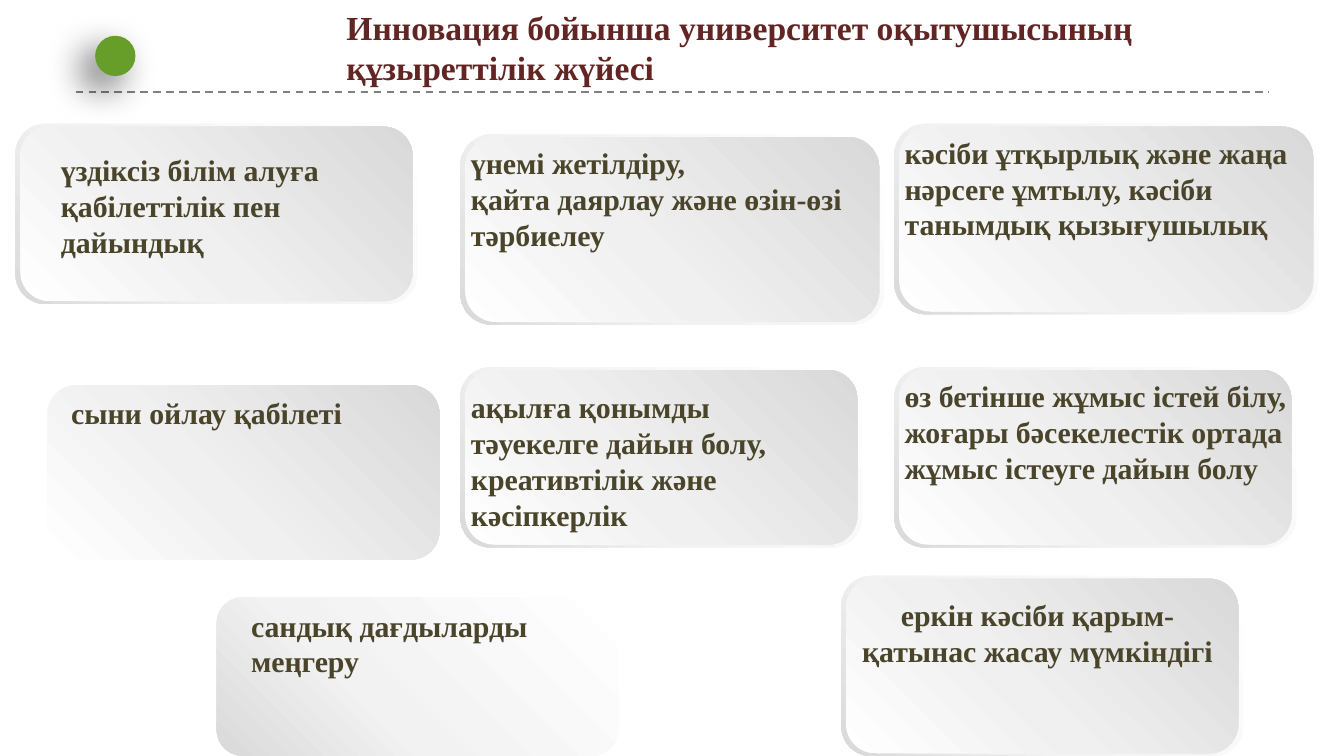
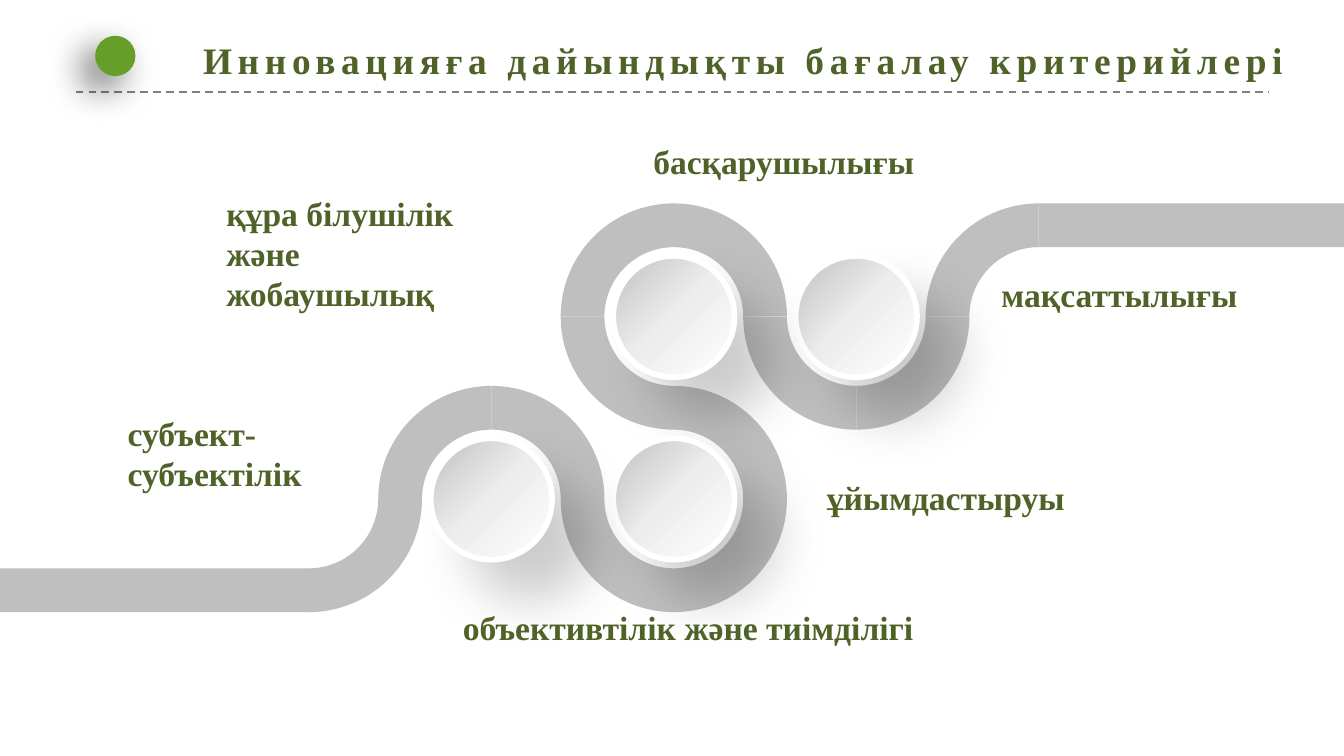
from dataclasses import dataclass
from math import cos, pi, sin, tan

from lxml.etree import SubElement
from pptx import Presentation
from pptx.dml.color import RGBColor
from pptx.enum.dml import MSO_LINE
from pptx.enum.shapes import MSO_CONNECTOR, MSO_SHAPE
from pptx.enum.text import MSO_ANCHOR, MSO_AUTO_SIZE, PP_ALIGN
from pptx.oxml.ns import qn
from pptx.util import Pt

FONT = "Times New Roman"
BLACK = RGBColor(0x00, 0x00, 0x00)
WHITE = RGBColor(0xFF, 0xFF, 0xFF)
GREY = RGBColor(0x80, 0x80, 0x80)
ROAD = RGBColor(0xBF, 0xBF, 0xBF)
DOT_GREEN = RGBColor(0x67, 0x9E, 0x2A)
TITLE_RED = RGBColor(0x63, 0x25, 0x23)
TEXT_GREEN = RGBColor(0x4F, 0x62, 0x28)
TEXT_OLIVE = RGBColor(0x4A, 0x45, 0x2A)

# Gradient stops: position in percent and colour
SHADE = RGBColor(0xD9, 0xD9, 0xD9)
EDGE_STOPS = [(0, WHITE), (62, RGBColor(0xF2, 0xF2, 0xF2)), (100, SHADE)]
FACE_STOPS = [(0, WHITE), (42, RGBColor(0xF0, 0xF0, 0xF0)), (100, SHADE)]
DISC_STOPS = [(0, RGBColor(0xC0, 0xC0, 0xC0)),
              (49, RGBColor(0xED, 0xED, 0xED)), (100, WHITE)]

# Text box insets: horizontal and vertical
NO_INSET = (0, 0)
SMALL_INSET = (5.4, 2.7)
INSET = (7.2, 3.6)

# Road geometry: ring centres lie on a square grid
OUTER, INNER = 60.6, 37.15
STEP = OUTER + INNER
GRID_X, GRID_Y = 165.5, 169.6
DISC = 65
SLIDE_W, SLIDE_H = 720, 405


@dataclass(frozen=True)
class Box:
    x: float
    y: float
    w: float
    h: float

    def lengths(self) -> tuple:
        return Pt(self.x), Pt(self.y), Pt(self.w), Pt(self.h)


@dataclass(frozen=True)
class Card:
    box: Box
    text: str
    text_box: Box
    inset: tuple = NO_INSET
    align: PP_ALIGN = PP_ALIGN.LEFT
    edge: bool = True
    face: bool = True


@dataclass(frozen=True)
class Label:
    text: str
    box: Box
    inset: tuple = SMALL_INSET
    spacing: float = 1.0
    wrap: bool = True


@dataclass(frozen=True)
class Ring:
    col: int
    row: int
    quarters: tuple  # 0 lower right, 1 lower left, 2 upper left, 3 upper right

    def center(self) -> tuple:
        return GRID_X + self.col * STEP, GRID_Y + self.row * STEP


CARDS = [
    Card(Box(246.6, 72, 227, 102),
         "үнемі жетілдіру,\nқайта даярлау және өзін-өзі тәрбиелеу",
         Box(252.3, 77.6, 215.3, 58.3)),
    Card(Box(8.3, 66.4, 215.3, 96.5),
         "үздіксіз білім алуға қабілеттілік пен дайындық",
         Box(25.5, 77.8, 198.7, 65.5), INSET),
    Card(Box(479.1, 66.4, 227, 102),
         "кәсіби ұтқырлық және жаңа нәрсеге ұмтылу, кәсіби танымдық қызығушылық",
         Box(484.6, 72, 215.3, 77.8)),
    Card(Box(246.6, 196.8, 215.3, 96.5),
         "ақылға қонымды тәуекелге дайын болу, креативтілік және кәсіпкерлік",
         Box(252.3, 208.3, 198.7, 77.8)),
    Card(Box(479.1, 196.8, 215.3, 96.5),
         "өз бетінше жұмыс істей білу, жоғары бәсекелестік ортада жұмыс істеуге дайын болу",
         Box(484.6, 202.3, 215.3, 58.3)),
    Card(Box(116.1, 319.9, 215.3, 85), "сандық дағдыларды меңгеру",
         Box(127.4, 321.8, 181.4, 46), INSET, face=False),
    Card(Box(22.8, 204.9, 215.3, 96.5), "сыни ойлау қабілеті",
         Box(31, 208, 193, 26.6), INSET, edge=False),
    Card(Box(450.7, 308.6, 215.3, 96.5), "еркін кәсіби қарым-қатынас жасау мүмкіндігі",
         Box(456.5, 319.7, 198.7, 38.9), align=PP_ALIGN.CENTER),
]

RINGS = [
    Ring(4, 0, (2,)), Ring(3, 0, (0, 1)), Ring(2, 0, (3, 2, 1)),
    Ring(2, 1, (3, 0, 1)), Ring(1, 1, (3, 2)), Ring(0, 1, (0,)),
]

LABELS = [
    Label("мақсаттылығы", Box(531.1, 144, 188.6, 26.6)),
    Label("құра білушілік және жобаушылық", Box(115.9, 100.4, 161.3, 70.6)),
    Label("ұйымдастыруы", Box(437.5, 241.9, 143.3, 37.4), spacing=1.5),
    Label("субъект-субъектілік", Box(63, 218.4, 125.3, 49)),
    Label("басқарушылығы", Box(342.9, 72, 155.5, 28.8), INSET, wrap=False),
    Label("объективтілік және тиімділігі", Box(240.9, 321.8, 360, 28.8), INSET),
]


def write(tf, text: str, *, size: float, color: RGBColor, inset=INSET,
          align=PP_ALIGN.LEFT, spacing=1.0, tracking=0, wrap=True) -> None:
    tf.word_wrap = wrap
    tf.auto_size = MSO_AUTO_SIZE.SHAPE_TO_FIT_TEXT
    tf.vertical_anchor = MSO_ANCHOR.TOP
    tf.margin_left = tf.margin_right = Pt(inset[0])
    tf.margin_top = tf.margin_bottom = Pt(inset[1])
    for i, line in enumerate(text.split("\n")):
        p = tf.add_paragraph() if i else tf.paragraphs[0]
        p.alignment = align
        p.line_spacing = spacing
        r = p.add_run()
        r.text = line
        r.font.name, r.font.size, r.font.bold = FONT, Pt(size), True
        r.font.color.rgb = color
        if tracking:
            r.font._element.set("spc", str(tracking * 100))


def add_text(s, box: Box, text: str, **fmt) -> None:
    write(s.shapes.add_textbox(*box.lengths()).text_frame, text, **fmt)


def add_color(parent, color: RGBColor):
    return SubElement(parent, qn("a:srgbClr"), val=str(color))


def set_gradient(sp, stops: list, angle: int) -> None:
    grad = sp._element.spPr.makeelement(qn("a:gradFill"), {"rotWithShape": "1"})
    sp._element.spPr.find(qn("a:prstGeom")).addnext(grad)
    gs_list = SubElement(grad, qn("a:gsLst"))
    for position, color in stops:
        add_color(SubElement(gs_list, qn("a:gs"), pos=str(position * 1000)), color)
    SubElement(grad, qn("a:lin"), ang=str(angle * 60000), scaled="0")


def set_shadow(sp, alpha: int, blur: float, dist: float, angle: int) -> None:
    effects = sp._element.spPr.find(qn("a:effectLst"))
    shadow = SubElement(effects, qn("a:outerShdw"), blurRad=str(Pt(blur)),
                        dist=str(Pt(dist)), dir=str(angle * 60000),
                        algn="ctr", rotWithShape="0")
    SubElement(add_color(shadow, BLACK), qn("a:alpha"), val=str(alpha * 1000))


def set_plain(sp, color: RGBColor | None = None) -> None:
    sp.shadow.inherit = False
    sp.line.fill.background()
    if color is not None:
        sp.fill.solid()
        sp.fill.fore_color.rgb = color


def add_shape(s, kind: MSO_SHAPE, box: Box, color: RGBColor | None = None):
    sp = s.shapes.add_shape(kind, *box.lengths())
    set_plain(sp, color)
    return sp


def add_slide(prs, title: str, box: Box, **fmt):
    s = prs.slides.add_slide(prs.slide_layouts[5])
    # Dashed rule and green dot
    rule = s.shapes.add_connector(MSO_CONNECTOR.STRAIGHT,
                                  Pt(40.5), Pt(49.2), Pt(679.5), Pt(49.2))
    rule.line.color.rgb, rule.line.width = GREY, Pt(1)
    rule.line.dash_style = MSO_LINE.DASH
    SubElement(rule._element.spPr, qn("a:effectLst"))
    dot = add_shape(s, MSO_SHAPE.OVAL, Box(51, 19.2, 21.6, 21.6), DOT_GREEN)
    set_shadow(dot, 60, 20, 10, 135)
    # Title
    sp = s.shapes.title
    sp.left, sp.top, sp.width, sp.height = box.lengths()
    write(sp.text_frame, title, **fmt)
    return s


def add_card(s, card: Card) -> None:
    b = card.box
    if card.edge:
        set_gradient(add_shape(s, MSO_SHAPE.ROUNDED_RECTANGLE, b), EDGE_STOPS, 135)
    if card.face:
        face = Box(b.x + 2.6, b.y + 1.5, b.w - 5.2, b.h - 3)
        set_gradient(add_shape(s, MSO_SHAPE.ROUNDED_RECTANGLE, face), FACE_STOPS, 315)
    add_text(s, card.text_box, card.text, size=16, color=TEXT_OLIVE,
             inset=card.inset, align=card.align)


def curve_line(line, sp, controls: list) -> None:
    """Turn a straight segment into a Bezier curve with the two controls."""
    curve = line.makeelement(qn("a:cubicBezTo"), {})
    for x, y in controls:
        SubElement(curve, qn("a:pt"), x=str(Pt(x) - sp.left), y=str(Pt(y) - sp.top))
    curve.append(line.find(qn("a:pt")))
    line.getparent().replace(line, curve)


def add_bend(s, center: tuple, quarter: int) -> None:
    angles = [(quarter + i / 2) * pi / 2 for i in range(3)]
    nodes = [(OUTER, a) for a in angles] + [(INNER, a) for a in angles[::-1]]

    def point(radius: float, a: float, pull: float = 0) -> tuple:
        return (center[0] + radius * (cos(a) - pull * sin(a)),
                center[1] + radius * (sin(a) + pull * cos(a)))

    points = [tuple(Pt(v) for v in point(*node)) for node in nodes]
    builder = s.shapes.build_freeform(*points[0])
    builder.add_line_segments(points[1:], close=True)
    sp = builder.convert_to_shape()
    set_plain(sp, ROAD)
    # Round the four segments that follow the two arcs
    lines = list(sp._element.iter(qn("a:lnTo")))
    for line, (radius, a), (next_radius, b) in zip(lines, nodes, nodes[1:]):
        if radius == next_radius:
            pull = 4 / 3 * tan((b - a) / 4)
            curve_line(line, sp, [point(radius, a, pull), point(radius, b, -pull)])


def add_disc(s, center: tuple) -> None:
    box = Box(center[0] - DISC / 2, center[1] - DISC / 2, DISC, DISC)
    sp = add_shape(s, MSO_SHAPE.OVAL, box)
    set_gradient(sp, DISC_STOPS, 45)
    sp.line.color.rgb, sp.line.width = WHITE, Pt(3)
    set_shadow(sp, 20, 29, 29, 45)


def build_skills(prs) -> None:
    s = add_slide(prs, "Инновация бойынша университет оқытушысының құзыреттілік жүйесі",
                  Box(178.4, 0, 499, 51), size=18, color=TITLE_RED)
    for card in CARDS:
        add_card(s, card)


def build_criteria(prs) -> None:
    s = add_slide(prs, "Инновацияға дайындықты бағалау критерийлері",
                  Box(76.3, 16.3, 643.7, 31.7), size=20, color=TEXT_GREEN,
                  align=PP_ALIGN.CENTER, tracking=3)
    # Winding road
    for ring in RINGS:
        for quarter in ring.quarters:
            add_bend(s, ring.center(), quarter)
    end_x, end_y = RINGS[0].center()
    start_x, start_y = RINGS[-1].center()
    for box in (Box(end_x, end_y - OUTER, SLIDE_W - end_x, OUTER - INNER),
                Box(0, start_y + INNER, start_x + 0.5, OUTER - INNER)):
        add_shape(s, MSO_SHAPE.RECTANGLE, box, ROAD)
    # Discs inside the bends
    for ring in RINGS[1:-1]:
        add_disc(s, ring.center())
    # Criteria
    for label in LABELS:
        add_text(s, label.box, label.text, size=18, color=TEXT_GREEN,
                 inset=label.inset, spacing=label.spacing, wrap=label.wrap)


def main() -> None:
    prs = Presentation()
    prs.slide_width, prs.slide_height = Pt(SLIDE_W), Pt(SLIDE_H)
    build_skills(prs)
    build_criteria(prs)
    prs.save("out.pptx")


if __name__ == "__main__":
    main()
